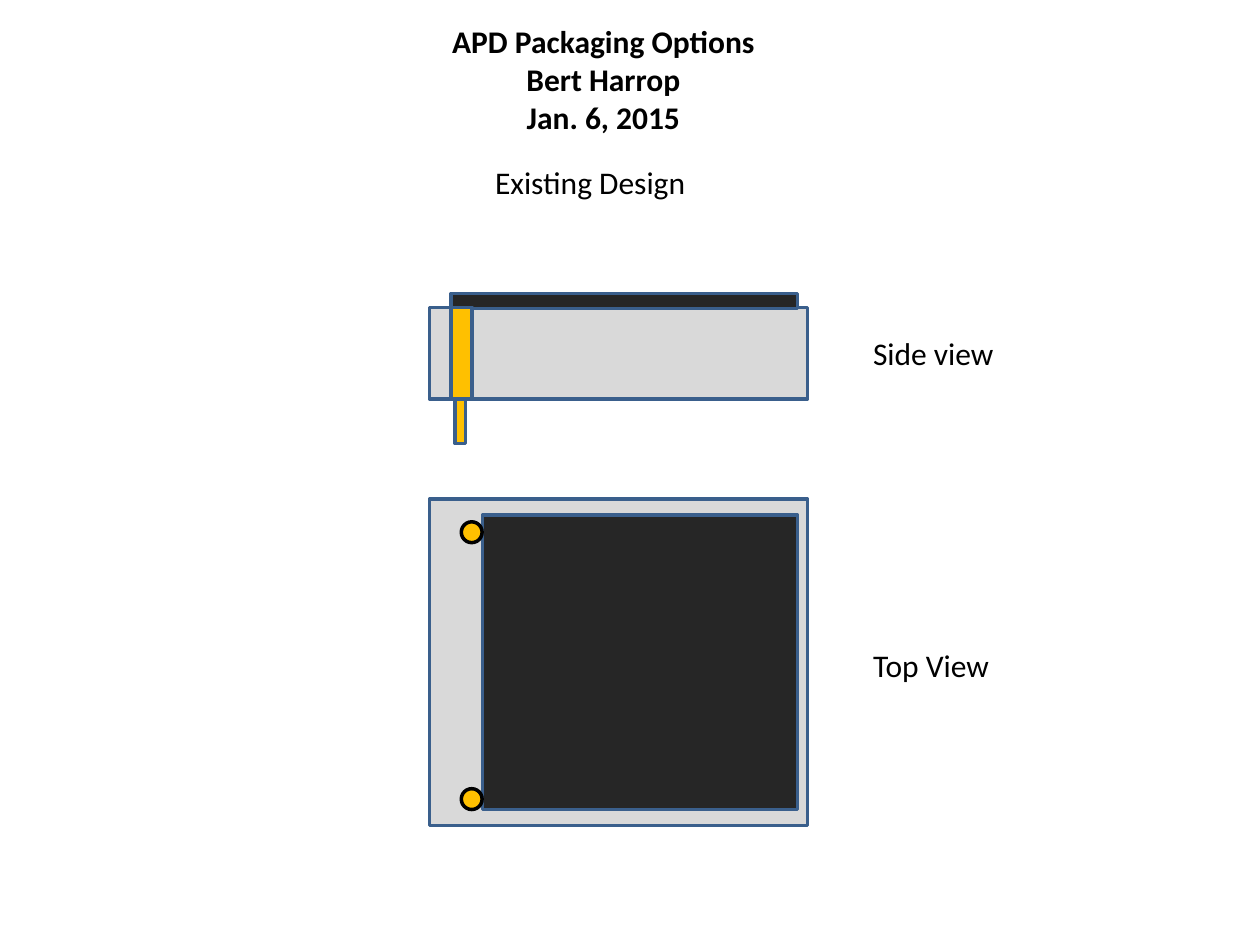
from pptx import Presentation
from pptx import util as u
from pptx.dml.color import RGBColor
from pptx.enum import shapes, text

COLORS = {
    "substrate": "D9D9D9",
    "die": "262626",
    "gold": "FFC000",
    "edge": "3A5F8C",
    "black": "000000",
}
RECT = shapes.MSO_SHAPE.RECTANGLE
OVAL = shapes.MSO_SHAPE.OVAL
LABEL_HEIGHT = 1.02
LABEL_GAP = 1.07


def color(name):
    return RGBColor.from_string(COLORS[name])


def add_text(page, box, lines, *, bold=False, align=text.PP_ALIGN.LEFT,
             anchor=text.MSO_ANCHOR.TOP, wrap=True):
    """Place lines of one paragraph, split by line breaks, in a text box."""
    frame = page.shapes.add_textbox(*map(u.Cm, box)).text_frame
    frame.word_wrap = wrap
    frame.vertical_anchor = anchor
    para = frame.paragraphs[0]
    para.alignment = align
    for index, line in enumerate(lines):
        if index:
            para.add_line_break()
        span = para.add_run()
        span.text = line
        span.font.name = "Calibri"
        span.font.size = u.Pt(18)
        span.font.bold = bold
        span.font.color.rgb = color("black")


def add_part(page, box, offset, size, fill, kind=RECT, edge="edge"):
    """Draw one part of the package at an offset from its view's corner."""
    left, top = box[0] + offset[0], box[1] + offset[1]
    part = page.shapes.add_shape(kind, *map(u.Cm, (left, top, *size)))
    part.shadow.inherit = False
    part.fill.solid()
    part.fill.fore_color.rgb = color(fill)
    part.line.color.rgb = color(edge)
    part.line.width = u.Pt(2)


def add_label(page, box, drop, label):
    left, top, width, _ = box
    label_box = (left + width + LABEL_GAP, top + drop, 2.97, LABEL_HEIGHT)
    add_text(page, label_box, [label], wrap=False)


def add_heading(page, box):
    left, top, width, height = box
    add_text(page, box, ["APD Packaging Options", "Bert Harrop", "Jan. 6, 2015"],
             bold=True, align=text.PP_ALIGN.CENTER, anchor=text.MSO_ANCHOR.MIDDLE)
    add_text(page, (left + 2.11, top + height + 0.83, 5.08, LABEL_HEIGHT),
             ["Existing Design"])


def add_side_view(page, box):
    width, height = box[2:]
    add_part(page, box, (0, 0), (width, height), "substrate")
    add_part(page, box, (0.43, -0.28), (6.99, 0.3), "die")
    add_part(page, box, (0.43, 0), (0.43, height), "gold")
    add_part(page, box, (0.51, height), (0.22, 0.89), "gold")
    add_label(page, box, 0.4, "Side view")


def add_top_view(page, box):
    width, height = box[2:]
    add_part(page, box, (0, 0), (width, height), "substrate")
    add_part(page, box, (1.07, 0.32), (6.35, 5.94), "die")
    for pad_top in (5.84, 0.46):
        add_part(page, box, (0.64, pad_top), (0.42, 0.42), "gold", OVAL, "black")
    add_label(page, box, 2.84, "Top View")


def main():
    deck = Presentation()
    deck.slide_width, deck.slide_height = u.Cm(25.4), u.Cm(19.05)
    page = deck.slides.add_slide(deck.slide_layouts[6])
    add_heading(page, (7.62, 0.84, 9.09, 1.5))
    add_side_view(page, (8.66, 6.2, 7.62, 1.85))
    add_top_view(page, (8.66, 10.06, 7.62, 6.58))
    deck.save("out.pptx")


if __name__ == "__main__":
    main()
